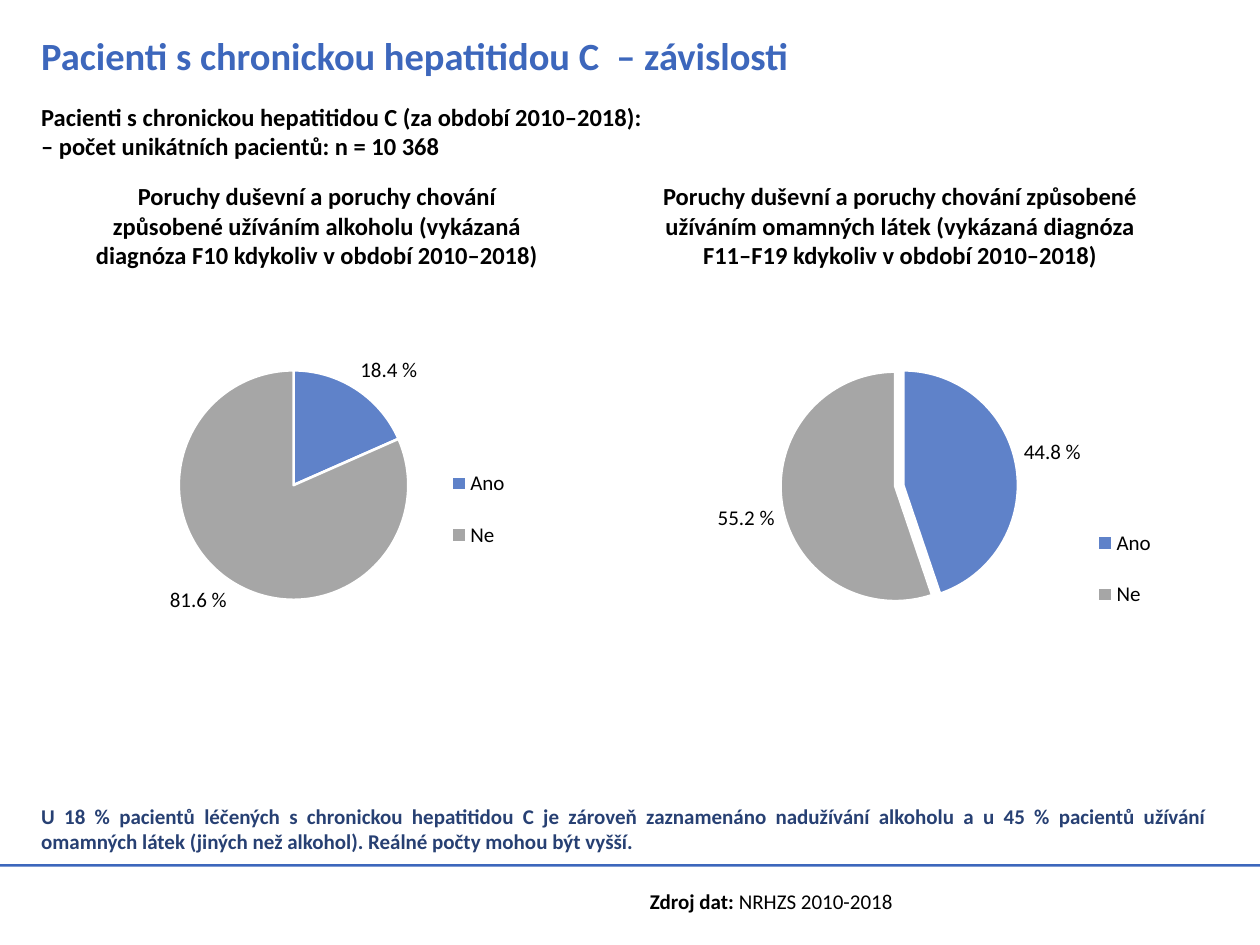
from lxml import etree
from pptx import Presentation
from pptx.chart.data import CategoryChartData
from pptx.dml.color import RGBColor
from pptx.enum.chart import XL_CHART_TYPE as ChartType, XL_LABEL_POSITION as LabelPos
from pptx.enum.chart import XL_LEGEND_POSITION as LegendPos
from pptx.enum.shapes import MSO_SHAPE as Shape
from pptx.enum.text import MSO_ANCHOR as Anchor, PP_ALIGN as Align
from pptx.oxml.ns import qn
from pptx.util import Cm, Pt

BLUE = RGBColor(0x3D, 0x67, 0xBC)
NAVY = RGBColor(0x27, 0x40, 0x73)
BLACK = RGBColor(0, 0, 0)
WHITE = RGBColor(0xFF, 0xFF, 0xFF)
YES_BLUE = RGBColor(0x5F, 0x82, 0xC9)
NO_GREY = RGBColor(0xA6, 0xA6, 0xA6)

prs = Presentation()
prs.slide_width, prs.slide_height = Cm(25.4), Cm(19.05)
slide = prs.slides.add_slide(prs.slide_layouts[6])


def add_text(box, paragraphs, size, color=BLACK, align=Align.LEFT, anchor=Anchor.TOP):
    """Each paragraph is a list of (text, bold) runs."""
    frame = slide.shapes.add_textbox(*[Cm(v) for v in box]).text_frame
    frame.word_wrap = True
    frame.vertical_anchor = anchor
    for i, runs in enumerate(paragraphs):
        paragraph = frame.paragraphs[0] if i == 0 else frame.add_paragraph()
        paragraph.alignment = align
        for text, bold in runs:
            run = paragraph.add_run()
            run.text = text
            run.font.color.rgb = color
            formats = {"name": "Calibri", "size": Pt(size), "bold": bold}
            for key, value in formats.items():
                setattr(run.font, key, value)


def set_layout(element, before, modes):
    """Place a chart part by fractions of the chart area."""
    for old in element.findall(qn("c:layout")):
        element.remove(old)
    layout = etree.Element(qn("c:layout"))
    manual = etree.SubElement(layout, qn("c:manualLayout"))
    for tag, value in modes.items():
        etree.SubElement(manual, qn("c:" + tag)).set("val", str(value))
    element.find(qn(before)).addprevious(layout)


# Footer rule
rule = slide.shapes.add_shape(Shape.RECTANGLE, 0, Cm(17.42), prs.slide_width, Cm(0.05))
rule.shadow.inherit = False
rule.fill.solid()
rule.fill.fore_color.rgb = BLUE
rule.line.fill.background()

# Title and patient count
add_text((0.58, 0.48, 24.61, 1.27), [[("Pacienti s chronickou hepatitidou C  – závislosti", True)]],
         22, BLUE, anchor=Anchor.MIDDLE)
add_text((0.58, 1.93, 23.24, 1.45),
         [[("Pacienti s chronickou hepatitidou C (za období 2010–2018):", True)],
          [("– počet unikátních pacientů: n = 10 368", True)]], 14)

# Two disorders: heading box, chart left, shares, explosion of "Ne", legend corner
disorders = [
    ("Poruchy duševní a poruchy chování způsobené užíváním alkoholu "
     "(vykázaná diagnóza F10 kdykoliv v období 2010–2018)",
     (1.5, 3.53, 9.78, 2.06), 1.5, (18.4, 81.6), 0, (0.7, 0.3)),
    ("Poruchy duševní a poruchy chování způsobené užíváním omamných látek "
     "(vykázaná diagnóza F11–F19 kdykoliv v období 2010–2018)",
     (12.9, 3.53, 10.49, 2.06), 13.79, (44.8, 55.2), 7, (0.77, 0.46)),
]
for heading, heading_box, left, shares, explosion, legend_corner in disorders:
    add_text(heading_box, [[(heading, True)]], 14, align=Align.CENTER)

    data = CategoryChartData()
    data.categories = ["Ano", "Ne"]
    data.add_series("Series 1", shares)
    chart = slide.shapes.add_chart(ChartType.PIE, Cm(left), Cm(6.71), Cm(10.52), Cm(7.49), data).chart
    chart.has_title = False
    chart.has_legend = True
    legend = chart.legend
    legend.position = LegendPos.BOTTOM
    legend.include_in_layout = False

    pie = chart.plots[0]
    pie.vary_by_categories = True
    pie.has_data_labels = True
    labels = pie.data_labels
    label_formats = {"show_percentage": True, "show_value": False, "position": LabelPos.OUTSIDE_END,
                     "number_format": "0.0\\ %", "number_format_is_linked": False}
    for key, value in label_formats.items():
        setattr(labels, key, value)

    for font, size in ((chart.font, 10), (legend.font, 12), (labels.font, 12)):
        font.name, font.size = "Calibri", Pt(size)
        font.color.rgb = BLACK

    # Slices
    for i, color in enumerate((YES_BLUE, NO_GREY)):
        slice_format = pie.series[0].points[i].format
        slice_format.fill.solid()
        slice_format.fill.fore_color.rgb = color
        slice_format.line.color.rgb = WHITE
        slice_format.line.width = Pt(1.5)
    if explosion:
        no_slice = chart.element.findall(".//" + qn("c:dPt"))[1]
        burst = etree.Element(qn("c:explosion"))
        burst.set("val", str(explosion))
        no_slice.find(qn("c:spPr")).addprevious(burst)

    # Places of pie and legend
    edges = {"xMode": "edge", "yMode": "edge"}
    set_layout(chart.element.find(".//" + qn("c:plotArea")), "c:pieChart",
               {"layoutTarget": "inner", **edges, "x": 0.2, "y": 0.1, "w": 0.44, "h": 0.62})
    set_layout(chart.element.find(".//" + qn("c:legend")), "c:overlay",
               {**edges, "x": legend_corner[0], "y": legend_corner[1], "w": 0.15, "h": 0.35})

# Conclusion and source
add_text((0.58, 15.98, 24, 1.45),
         [[("U 18 % pacientů léčených s chronickou hepatitidou C je zároveň zaznamenáno nadužívání "
            "alkoholu a u 45 % pacientů užívání omamných látek (jiných než alkohol). "
            "Reálné počty mohou být vyšší.", True)]],
         12, NAVY, Align.JUSTIFY, Anchor.MIDDLE)
add_text((12.85, 17.78, 11.89, 0.76), [[("Zdroj dat: ", True), ("NRHZS 2010-2018", False)]], 12)

prs.save("out.pptx")
